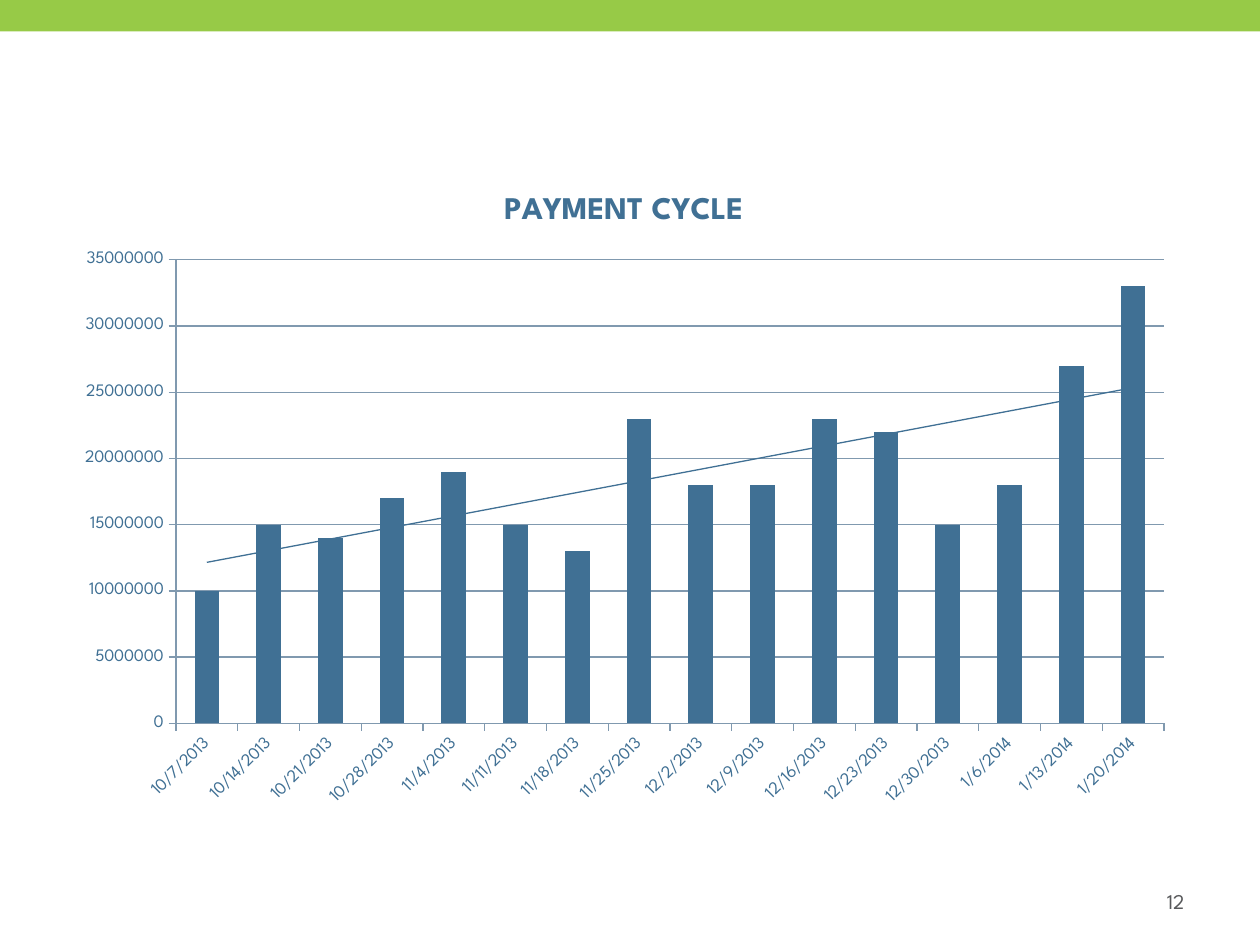
from dataclasses import dataclass

from pptx import Presentation
from pptx.chart.data import CategoryChartData
from pptx.dml.color import RGBColor
from pptx.enum.chart import XL_CHART_TYPE, XL_TICK_MARK
from pptx.enum.shapes import MSO_SHAPE
from pptx.enum.text import MSO_ANCHOR, PP_ALIGN
from pptx.oxml import parse_xml
from pptx.oxml.ns import nsdecls
from pptx.util import Inches, Pt

COLUMNS = XL_CHART_TYPE.COLUMN_CLUSTERED
TICK_OUTSIDE = XL_TICK_MARK.OUTSIDE
RECTANGLE = MSO_SHAPE.RECTANGLE
MIDDLE = MSO_ANCHOR.MIDDLE
RIGHT = PP_ALIGN.RIGHT
BLANK_LAYOUT = 6
GRID_COLUMNS, GRID_ROWS = 120, 90

MILLION = 1_000_000
PAYMENTS = {  # week: payments in millions
    "10/7/2013": 10, "10/14/2013": 15, "10/21/2013": 14, "10/28/2013": 17,
    "11/4/2013": 19, "11/11/2013": 15, "11/18/2013": 13, "11/25/2013": 23,
    "12/2/2013": 18, "12/9/2013": 18, "12/16/2013": 23, "12/23/2013": 22,
    "12/30/2013": 15, "1/6/2014": 18, "1/13/2014": 27, "1/20/2014": 33,
}


@dataclass(frozen=True)
class Theme:
    font: str = "League Spartan"
    band: str = "97CA47"
    blue: str = "407094"
    grid: str = "8099AF"
    grey: str = "58595B"
    title_size: int = 18
    label_size: int = 10
    number_size: int = 12


class SlideBuilder:
    """Holds the theme and the current slide; places are in grid cells."""

    def __init__(self, deck, theme):
        self.theme = theme
        self.column = deck.slide_width / GRID_COLUMNS
        self.row = deck.slide_height / GRID_ROWS
        self.slide = deck.slides.add_slide(deck.slide_layouts[BLANK_LAYOUT])

    def frame(self, left, top, width, height):
        return (int(left * self.column), int(top * self.row),
                int(width * self.column), int(height * self.row))

    def style(self, font, size, color, bold=False):
        font.name, font.size, font.bold = self.theme.font, Pt(size), bold
        font.color.rgb = RGBColor.from_string(color)

    def line(self, line_format, color, width):
        line_format.color.rgb = RGBColor.from_string(color)
        line_format.width = Pt(width)

    def band(self, *place):
        band = self.slide.shapes.add_shape(RECTANGLE, *self.frame(*place))
        band.shadow.inherit = False
        band.fill.solid()
        band.fill.fore_color.rgb = RGBColor.from_string(self.theme.band)
        band.line.fill.background()

    def page_number(self, number, *place):
        box = self.slide.shapes.add_textbox(*self.frame(*place))
        box.text_frame.word_wrap = True
        box.text_frame.vertical_anchor = MIDDLE
        para = box.text_frame.paragraphs[0]
        para.text, para.alignment = number, RIGHT
        self.style(para.font, self.theme.number_size, self.theme.grey)

    def column_chart(self, title, values, left, top, width, height):
        theme = self.theme
        data = CategoryChartData(number_format="General")
        data.categories = list(values)
        data.add_series("Series 1", [value * MILLION for value in values.values()])
        place = self.frame(left, top, width, height)
        chart = self.slide.shapes.add_chart(COLUMNS, *place, data).chart
        chart.has_legend = False
        self.style(chart.font, theme.label_size, theme.blue)

        # Title
        chart.has_title = True
        chart.chart_title.include_in_layout = False
        para = chart.chart_title.text_frame.paragraphs[0]
        para.text = title
        self.style(para.font, theme.title_size, theme.blue, bold=True)

        # Axes and gridlines
        for axis in (chart.category_axis, chart.value_axis):
            axis.major_tick_mark = TICK_OUTSIDE
            self.line(axis.format.line, theme.grid, 0.75)
            self.style(axis.tick_labels.font, theme.label_size, theme.blue)
        chart.value_axis.minimum_scale = 0
        chart.value_axis.maximum_scale = 35 * MILLION
        chart.value_axis.major_unit = 5 * MILLION
        chart.value_axis.has_major_gridlines = True
        self.line(chart.value_axis.major_gridlines.format.line, theme.grid, 0.75)

        # Columns
        plot = chart.plots[0]
        plot.gap_width, plot.vary_by_categories = 150, False
        series = plot.series[0]
        series.format.fill.solid()
        series.format.fill.fore_color.rgb = RGBColor.from_string(theme.blue)

        self.slant_labels(chart.category_axis)
        self.add_trend(series)

        # Title and plot area, in cells from the chart's corner
        title_part, plot_part = chart._chartSpace.xpath("c:chart/c:title|c:chart/c:plotArea")
        self.arrange(title_part, 1, x=41.5 / width, y=0.84 / height)
        self.arrange(plot_part, 0, '<c:layoutTarget val="inner"/>',
                     x=10.76 / width, y=7.76 / height, w=94.1 / width, h=44.15 / height)

    def slant_labels(self, axis):
        body = axis._element.xpath("c:txPr/a:bodyPr")[0]
        body.set("rot", str(-45 * 60000))
        body.set("vert", "horz")

    def add_trend(self, series):
        trend = parse_xml(
            f'<c:trendline {nsdecls("c", "a")}><c:spPr><a:ln w="{Pt(0.75)}"><a:solidFill>'
            f'<a:srgbClr val="{self.theme.blue}"/></a:solidFill></a:ln></c:spPr>'
            '<c:trendlineType val="linear"/><c:dispRSqr val="0"/><c:dispEq val="0"/>'
            '</c:trendline>')
        series._element.xpath("c:cat")[0].addprevious(trend)

    def arrange(self, part, position, target="", **shares):
        spots = "".join(f'<c:{key} val="{share:.4f}"/>' for key, share in shares.items())
        layout = parse_xml(
            f'<c:layout {nsdecls("c")}><c:manualLayout>{target}'
            '<c:xMode val="edge"/><c:yMode val="edge"/>'
            f'{spots}</c:manualLayout></c:layout>')
        for old in part.xpath("c:layout"):
            part.remove(old)
        part.insert(position, layout)


def main():
    deck = Presentation()
    deck.slide_width, deck.slide_height = Inches(10), Inches(7.5)
    page = SlideBuilder(deck, Theme())
    page.band(0, 0, GRID_COLUMNS, 3)
    page.page_number("12", 86, 83.4, 28, 4.8)
    page.column_chart("PAYMENT CYCLE", PAYMENTS, 6, 17, 107, 61)
    deck.save("out.pptx")


if __name__ == "__main__":
    main()
